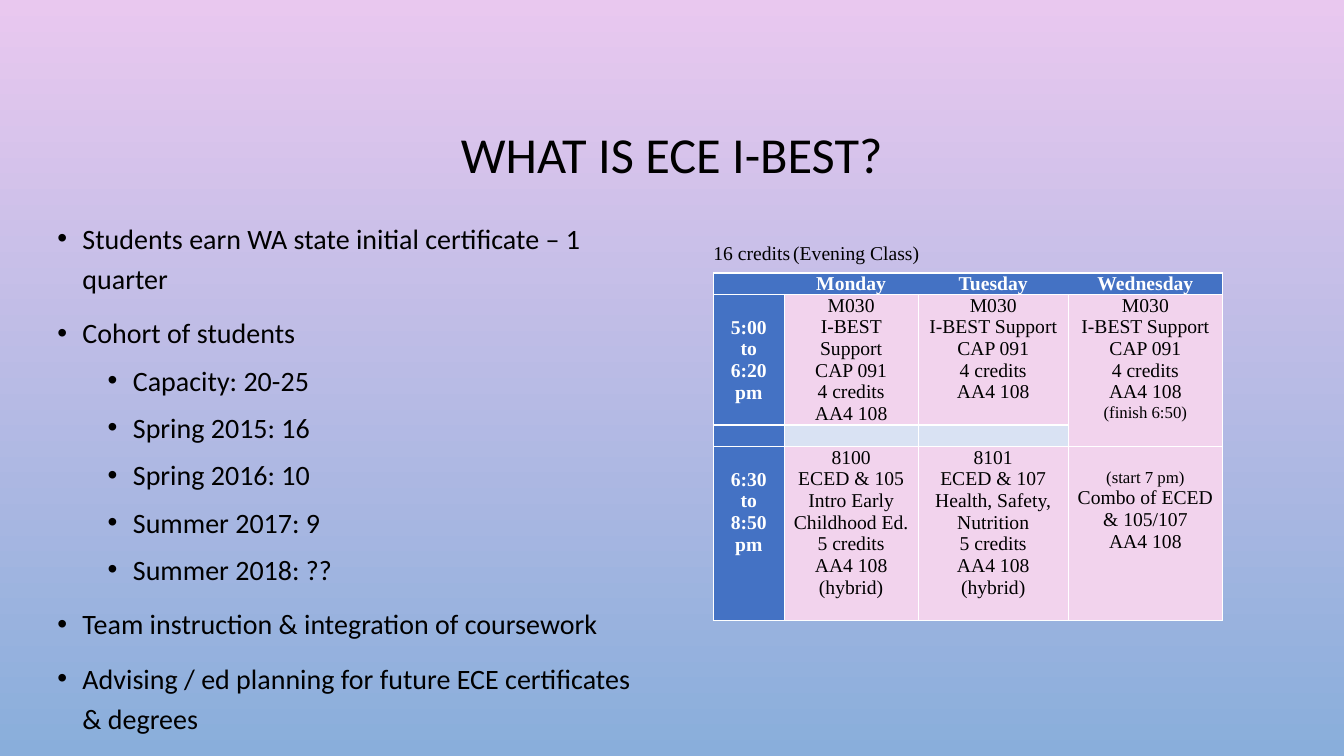
from dataclasses import dataclass

from lxml.etree import SubElement
from pptx import Presentation
from pptx.dml.color import RGBColor
from pptx.enum.text import MSO_ANCHOR, MSO_AUTO_SIZE, PP_ALIGN
from pptx.oxml.ns import qn
from pptx.util import Cm, Pt


@dataclass(frozen=True)
class Theme:
    sans: str = "Calibri"
    serif: str = "Times New Roman"
    title_size: float = 36
    body_size: float = 20
    table_size: float = 14
    note_size: float = 12
    gap_size: float = 9
    text: str = "000000"
    light: str = "FFFFFF"
    header: str = "4472C4"
    course: str = "F2D3ED"
    pause: str = "D9E2F3"
    sky_top: str = "E9C8EF"
    sky_bottom: str = "89AEDB"


TITLE = "WHAT IS ECE I-BEST?"
POINTS = [
    (0, "Students earn WA state initial certificate – 1 quarter"),
    (0, "Cohort of students"),
    (1, "Capacity: 20-25"),
    (1, "Spring 2015: 16"),
    (1, "Spring 2016: 10"),
    (1, "Summer 2017: 9"),
    (1, "Summer 2018: ??"),
    (0, "Team instruction & integration of coursework"),
    (0, "Advising / ed planning for future ECE certificates & degrees"),
]
SUPPORT = "M030\nI-BEST Support\nCAP 091\n4 credits\nAA4 108"
SCHEDULE = [
    ["", "Monday", "Tuesday", "Wednesday"],
    ["5:00\nto\n6:20 pm", SUPPORT, SUPPORT, SUPPORT + "\n(finish 6:50)"],
    ["", "", "", ""],
    ["6:30\nto\n8:50 pm",
     "8100\nECED & 105\nIntro Early Childhood Ed.\n5 credits\nAA4 108\n(hybrid)",
     "8101\nECED & 107\nHealth, Safety, Nutrition\n5 credits\nAA4 108\n(hybrid)",
     "(start 7 pm)\nCombo of ECED & 105/107\nAA4 108"],
]
COLUMN_WIDTHS = [1.78, 3.38, 3.78, 3.89]
ROW_HEIGHTS = [0.55, 3.28, 0.55, 4.37]
NOTES = ("(finish 6:50)", "(start 7 pm)")
LOWERED = ("5:00", "6:30", "(start")  # cells that begin one line down


class SlideBuilder:
    def __init__(self, page, theme):
        self.page = page
        self.theme = theme

    def style(self, span, size, face, color, bold=False):
        span.font.size = Pt(size)
        span.font.name = face
        span.font.bold = bold
        span.font.color.rgb = RGBColor.from_string(color)

    def place(self, shape, left, top, width, height):
        shape.left, shape.top = Cm(left), Cm(top)
        shape.width, shape.height = Cm(width), Cm(height)

    def background(self):
        fill = self.page.background.fill
        fill.gradient()
        fill.gradient_angle = 270
        colors = (self.theme.sky_top, self.theme.sky_bottom)
        for stop, color in zip(fill.gradient_stops, colors):
            stop.color.rgb = RGBColor.from_string(color)

    def title(self, text, *bounds):
        box = self.page.shapes.title
        self.place(box, *bounds)
        frame = box.text_frame
        frame.text = text
        frame.auto_size = MSO_AUTO_SIZE.NONE
        frame.vertical_anchor = MSO_ANCHOR.MIDDLE
        para = frame.paragraphs[0]
        para.alignment = PP_ALIGN.CENTER
        para.line_spacing = 0.9
        self.style(para.runs[0], self.theme.title_size, self.theme.sans, self.theme.text)

    def bullets(self, points, *bounds):
        box = self.page.placeholders[1]
        self.place(box, *bounds)
        frame = box.text_frame
        frame.text = "\n".join(text for _, text in points)
        frame.auto_size = MSO_AUTO_SIZE.NONE
        frame.vertical_anchor = MSO_ANCHOR.TOP
        for index, (para, (level, _)) in enumerate(zip(frame.paragraphs, points)):
            para.level = level
            para.line_spacing = 1.2
            para.space_before = Pt((5 if level else 10) if index else 0)
            para.space_after = Pt(0)
            properties = para._p.get_or_add_pPr()
            properties.set("marL", str(Cm(0.635 + 1.27 * level)))
            properties.set("indent", str(Cm(-0.635)))
            SubElement(properties, qn("a:buFont"), typeface="Arial")
            SubElement(properties, qn("a:buChar"), char="•")
            self.style(para.runs[0], self.theme.body_size, self.theme.sans, self.theme.text)

    def caption(self, *bounds):
        theme = self.theme
        box = self.page.shapes.add_textbox(*map(Cm, bounds))
        frame = box.text_frame
        frame.word_wrap = True
        frame.vertical_anchor = MSO_ANCHOR.MIDDLE
        for text, size, face in (
            ("16 credits", theme.table_size, theme.serif),
            (" ", theme.gap_size, theme.sans),
            ("(Evening Class)", theme.table_size, theme.serif),
        ):
            span = frame.paragraphs[0].add_run()
            span.text = text
            self.style(span, size, face, theme.text)

    def borders(self, cell, hidden):
        properties = cell._tc.get_or_add_tcPr()
        for side in "LRTB":
            line = SubElement(properties, qn(f"a:ln{side}"), w=str(Pt(1)))
            if side in hidden:
                SubElement(line, qn("a:noFill"))
            else:
                fill = SubElement(line, qn("a:solidFill"))
                SubElement(fill, qn("a:srgbClr"), val=self.theme.light)

    def cell(self, cell, text, fill, heading):
        theme = self.theme
        cell.fill.solid()
        cell.fill.fore_color.rgb = RGBColor.from_string(fill)
        cell.margin_left = cell.margin_right = Cm(0.18)
        cell.margin_top = Cm(0.55 if text.startswith(LOWERED) else 0)
        cell.margin_bottom = 0
        cell.text_frame.text = text
        for para in cell.text_frame.paragraphs:
            para.alignment = PP_ALIGN.CENTER
            for span in para.runs:
                size = theme.note_size if span.text in NOTES else theme.table_size
                color = theme.light if heading else theme.text
                self.style(span, size, theme.serif, color, heading)
            if not para.runs:  # keeps an empty row as low as a text line
                SubElement(para._p, qn("a:endParaRPr"), sz=str(theme.note_size * 100))

    def schedule(self, rows, left, top):
        theme = self.theme
        last = len(COLUMN_WIDTHS) - 1
        table = self.page.shapes.add_table(
            len(rows), len(COLUMN_WIDTHS), Cm(left), Cm(top),
            Cm(sum(COLUMN_WIDTHS)), Cm(sum(ROW_HEIGHTS))).table
        table.horz_banding = False
        for column, width in zip(table.columns, COLUMN_WIDTHS):
            column.width = Cm(width)
        for row, height in zip(table.rows, ROW_HEIGHTS):
            row.height = Cm(height)
        for r, texts in enumerate(rows):
            for c, text in enumerate(texts):
                heading = r == 0 or c == 0
                fill = theme.header if heading else theme.course if text else theme.pause
                hidden = ("L" if c else "") + ("R" if c < last else "") if r == 0 else ""
                self.borders(table.cell(r, c), hidden)
                self.cell(table.cell(r, c), text, fill, heading)
        table.cell(1, last).merge(table.cell(2, last))


def main():
    deck = Presentation()
    deck.slide_width, deck.slide_height = Cm(33.87), Cm(19.05)
    page = deck.slides.add_slide(deck.slide_layouts[1])
    builder = SlideBuilder(page, Theme())
    builder.background()
    builder.title(TITLE, 2.54, 1.73, 28.78, 4.45)
    builder.bullets(POINTS, 1.19, 5.28, 15.52, 10.8)
    builder.schedule(SCHEDULE, 17.98, 6.88)
    builder.caption(17.73, 5.94, 16.1, 0.86)
    deck.save("out.pptx")


if __name__ == "__main__":
    main()
